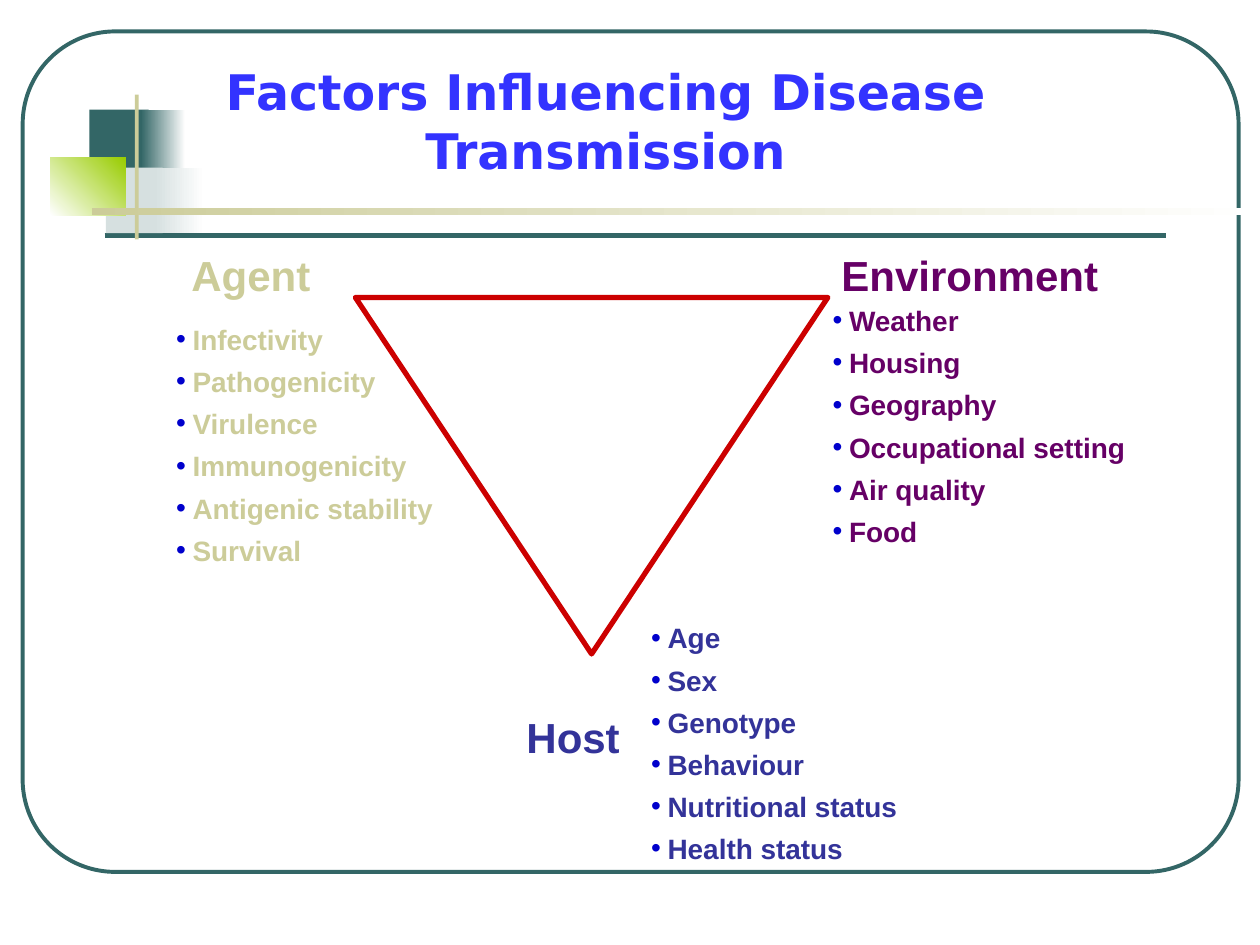
from typing import NamedTuple, Optional

from lxml.etree import SubElement
from pptx import Presentation
from pptx.dml.color import RGBColor
from pptx.enum.shapes import MSO_CONNECTOR, MSO_SHAPE
from pptx.enum.text import MSO_AUTO_SIZE, PP_ALIGN
from pptx.oxml.ns import qn
from pptx.util import Inches, Pt

TEAL = RGBColor(0x33, 0x66, 0x66)
PALE_TEAL = RGBColor(0xD6, 0xE0, 0xE0)
LIME = RGBColor(0x99, 0xCC, 0x00)
SAND = RGBColor(0xCC, 0xCC, 0x99)
WHITE = RGBColor(0xFF, 0xFF, 0xFF)
RED = RGBColor(0xCC, 0x00, 0x00)
INDIGO = RGBColor(0x33, 0x33, 0x99)
PURPLE = RGBColor(0x66, 0x00, 0x66)
TITLE_BLUE = RGBColor(0x33, 0x33, 0xFF)
BULLET_BLUE = RGBColor(0x00, 0x00, 0xCC)

Box = tuple[float, float, float, float]


class Block(NamedTuple):
    """A decorative rectangle; with an end colour it fades from start to end."""
    box: Box
    start: RGBColor
    end: Optional[RGBColor] = None
    angle: float = 0


class Factor(NamedTuple):
    name: str
    name_box: Box
    list_box: Box
    color: RGBColor
    items: tuple[str, ...]


BLOCKS = (
    Block((0.71, 0.87, 0.47, 0.52), TEAL),
    Block((1.12, 0.87, 0.35, 0.52), TEAL, WHITE),
    Block((0.84, 1.33, 0.45, 0.52), PALE_TEAL),
    Block((1.23, 1.33, 0.39, 0.52), PALE_TEAL, WHITE),
    Block((0.4, 1.25, 0.6, 0.46), WHITE, LIME, 45),
    Block((1.07, 0.75, 0.03, 1.15), SAND),
    Block((0.73, 1.65, 9.27, 0.06), SAND, WHITE),
)

FACTORS = (
    Factor("Agent", (1.42, 1.93, 1.15, 0.5), (1.3, 2.51, 2.38, 2.1), SAND,
           ("Infectivity", "Pathogenicity", "Virulence", "Immunogenicity",
            "Antigenic stability", "Survival")),
    Factor("Host", (4.08, 5.6, 0.94, 0.5), (5.07, 4.88, 3.08, 2.1), INDIGO,
           ("Age", "Sex", "Genotype", "Behaviour", "Nutritional status",
            "Health status")),
    Factor("Environment", (6.58, 1.93, 2.24, 0.5), (6.51, 2.36, 2.58, 2.1), PURPLE,
           ("Weather", "Housing", "Geography", "Occupational setting",
            "Air quality", "Food")),
)


def add_outline(s, kind: MSO_SHAPE, box: Box, color: RGBColor, width: float):
    sp = s.shapes.add_shape(kind, *map(Inches, box))
    sp.shadow.inherit = False
    sp.fill.background()
    sp.line.color.rgb = color
    sp.line.width = Pt(width)
    return sp


def add_rule(s, x1: float, x2: float, y: float) -> None:
    line = s.shapes.add_connector(
        MSO_CONNECTOR.STRAIGHT, Inches(x1), Inches(y), Inches(x2), Inches(y))
    line.line.color.rgb = TEAL
    line.line.width = Pt(3)
    SubElement(line._element.spPr, qn("a:effectLst"))


def add_block(s, block: Block) -> None:
    sp = s.shapes.add_shape(MSO_SHAPE.RECTANGLE, *map(Inches, block.box))
    sp.shadow.inherit = False
    sp.line.fill.background()
    if block.end is None:
        sp.fill.solid()
        sp.fill.fore_color.rgb = block.start
        return
    sp.fill.gradient()
    sp.fill.gradient_angle = block.angle
    for stop, color, position in zip(
            sp.fill.gradient_stops, (block.start, block.end), (0, 1)):
        stop.color.rgb = color
        stop.position = position


def add_text_frame(s, box: Box, wrap: bool = True):
    tf = s.shapes.add_textbox(*map(Inches, box)).text_frame
    tf.word_wrap = wrap
    tf.auto_size = MSO_AUTO_SIZE.SHAPE_TO_FIT_TEXT
    return tf


def add_run(p, text: str, size: float, color: RGBColor, font: str = "Arial") -> None:
    r = p.add_run()
    r.text = text
    r.font.name = font
    r.font.size = Pt(size)
    r.font.bold = True
    r.font.color.rgb = color


def add_bullet(p) -> None:
    """Give the paragraph a blue bullet with a hanging indent."""
    pPr = p._p.get_or_add_pPr()
    indent = Inches(0.13)
    pPr.set("marL", str(indent))
    pPr.set("indent", str(-indent))
    color = SubElement(pPr, qn("a:buClr"))
    SubElement(color, qn("a:srgbClr"), val=str(BULLET_BLUE))
    SubElement(pPr, qn("a:buFont"), typeface="Arial")
    SubElement(pPr, qn("a:buChar"), char="•")


def add_factor(s, factor: Factor) -> None:
    name = add_text_frame(s, factor.name_box, wrap=False)
    add_run(name.paragraphs[0], factor.name, 24, factor.color)
    tf = add_text_frame(s, factor.list_box)
    for i, item in enumerate(factor.items):
        p = tf.add_paragraph() if i else tf.paragraphs[0]
        add_bullet(p)
        if i:
            p.line_spacing = 0.8
            p.space_before = Pt(8.7)
        add_run(p, item, 16, factor.color)


def main() -> None:
    prs = Presentation()
    prs.slide_width, prs.slide_height = Inches(10), Inches(7.5)
    s = prs.slides.add_slide(prs.slide_layouts[6])

    frame = add_outline(s, MSO_SHAPE.ROUNDED_RECTANGLE, (0.18, 0.25, 9.65, 6.67), TEAL, 2.25)
    frame.adjustments[0] = 0.11
    add_rule(s, 0.83, 9.25, 1.87)

    triangle = add_outline(s, MSO_SHAPE.ISOSCELES_TRIANGLE, (2.82, 2.36, 3.75, 2.83), RED, 3)
    triangle.rotation = 180
    for factor in FACTORS:
        add_factor(s, factor)
    for block in BLOCKS:
        add_block(s, block)

    p = add_text_frame(s, (1.46, 0.44, 6.69, 1.03)).paragraphs[0]
    p.alignment = PP_ALIGN.CENTER
    add_run(p, "Factors Influencing Disease Transmission", 28, TITLE_BLUE, "DejaVu Sans")

    prs.save("out.pptx")


if __name__ == "__main__":
    main()
